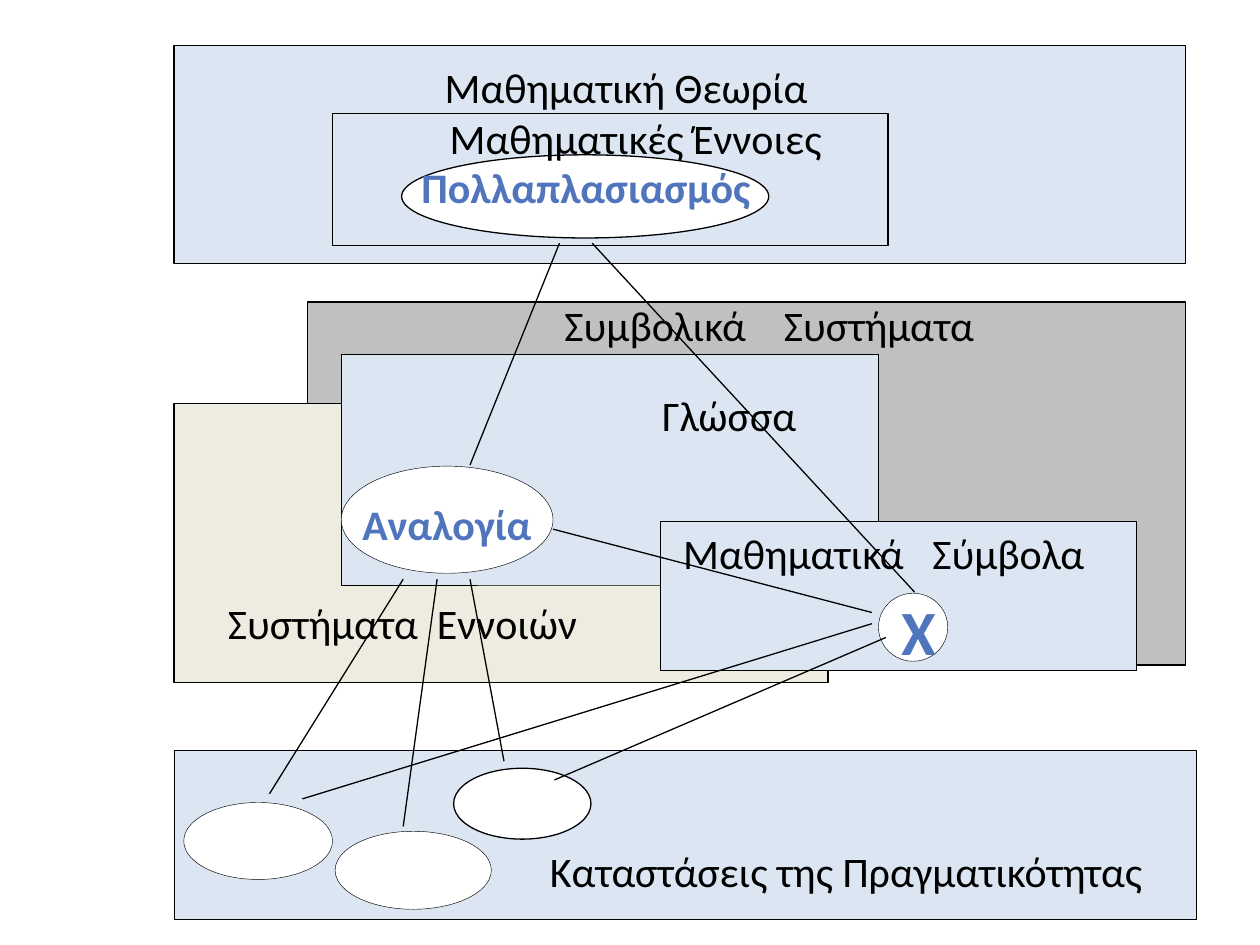
import pptx
import pptx.util
import pptx.dml.color
import pptx.enum.shapes
import pptx.enum.text
import lxml.etree

Pt = pptx.util.Pt
RGB = pptx.dml.color.RGBColor
Kind = pptx.enum.shapes.MSO_SHAPE
Link = pptx.enum.shapes.MSO_CONNECTOR
Align = pptx.enum.text.PP_ALIGN

BLACK = RGB(0, 0, 0)
WHITE = RGB(0xFF, 0xFF, 0xFF)
PALE = RGB(0xDC, 0xE6, 0xF2)
GREY = RGB(0xC0, 0xC0, 0xC0)
SAND = RGB(0xEE, 0xEC, 0xE1)
BLUE = RGB(0x50, 0x75, 0xBC)
THIN, FINE = 0.75, 0.25
SPACE = 0.226


class Board:
    def __init__(self, deck):
        self.slide = deck.slides.add_slide(deck.slide_layouts[6])
        self.style = {"name": "Calibri", "size": Pt(24), "bold": False}

    def shape(self, kind, box, fill, width):
        item = self.slide.shapes.add_shape(kind, *map(Pt, box))
        item.shadow.inherit = False
        item.fill.solid()
        item.fill.fore_color.rgb = fill
        item.line.color.rgb = BLACK
        item.line.width = Pt(width)

    def rect(self, box, fill=PALE, width=FINE):
        self.shape(Kind.RECTANGLE, box, fill, width)

    def oval(self, box, width=FINE):
        self.shape(Kind.OVAL, box, WHITE, width)

    def line(self, start, end):
        item = self.slide.shapes.add_connector(
            Link.STRAIGHT, *map(Pt, start + end))
        item.line.color.rgb = BLACK
        item.line.width = Pt(THIN)
        tag = pptx.oxml.ns.qn("a:effectLst")
        lxml.etree.SubElement(item._element.spPr, tag)

    def text(self, box, words, color=BLACK, align=Align.CENTER, gap=1, **extra):
        item = self.slide.shapes.add_textbox(*map(Pt, box))
        frame = item.text_frame
        frame.word_wrap = True
        para = frame.paragraphs[0]
        para.alignment = align
        style = {**self.style, **extra}
        first, *rest = words if gap > 1 else [words]
        parts = [first] + [part for word in rest for part in (" ", word)]
        for part in parts:
            run = para.add_run()
            run.text = part
            for key, value in style.items():
                setattr(run.font, key, value)
            run.font.color.rgb = color
            if part == " ":
                wide = (gap - 1) * SPACE * style["size"].pt
                run._r.get_or_add_rPr().set("spc", str(round(wide * 100)))


def main():
    deck = pptx.Presentation()
    deck.slide_width, deck.slide_height = Pt(720), Pt(540)
    board = Board(deck)

    board.rect((99.4, 26, 578, 124.6), width=THIN)
    board.rect((190, 65, 317.5, 75.5), width=THIN)
    board.oval((229.5, 88.5, 209.8, 47.5), THIN)
    board.rect((175.7, 172.6, 501.8, 207.4), GREY, THIN)
    board.rect((99.4, 230.4, 373.7, 159.8), SAND, THIN)
    board.rect((195, 202.3, 307, 132))
    board.rect((377.3, 298, 272, 85))
    board.oval((502, 339, 39.6, 38.9))
    board.oval((195, 266.4, 121, 61.2))
    board.rect((99.4, 428.6, 584, 96.5))
    board.oval((105, 458.6, 85, 44))
    board.oval((191.5, 475, 89.3, 44.6))

    for start, end in [
        ((230.4, 331), (154, 453.6)),
        ((268.6, 331), (288, 435)),
        ((316, 302.4), (498.2, 350)),
        ((319.7, 139), (268.6, 265.7)),
        ((338.4, 139), (522.7, 338.4)),
    ]:
        board.line(start, end)
    board.oval((259.2, 439, 78.5, 40.5), THIN)
    for start, end in [
        ((249.8, 331), (230.4, 472.3)),
        ((506.2, 364.3), (316.8, 445.7)),
        ((498.2, 356.4), (172.8, 456.5)),
    ]:
        board.line(start, end)

    board.text((247, 31.7, 235.4, 65.5), "Μαθηματική Θεωρία", align=Align.LEFT)
    board.text((201.6, 60.5, 323.3, 36), "Μαθηματικές Έννοιες")
    board.text((230.4, 88.6, 208.8, 36), "Πολλαπλασιασμός", BLUE, bold=True)
    board.text((229.7, 167.8, 419.8, 36), ("Συμβολικά", "Συστήματα"), gap=4)
    board.text((85.2, 337.7, 289.4, 36), ("Συστήματα", "Εννοιών"), gap=2)
    board.text((363.2, 298, 283.7, 36), ("Μαθηματικά", "Σύμβολα"), gap=3)
    board.text((345.8, 218.9, 141.8, 36), "Γλώσσα")
    board.text((508.3, 334.8, 28, 51), "Χ", BLUE, bold=True, size=Pt(36))
    board.text((181.6, 281.5, 147.6, 36), "Αναλογία", BLUE, bold=True)
    board.text((280.8, 479.5, 405.4, 80), "Καταστάσεις της Πραγματικότητας")

    deck.save("out.pptx")


if __name__ == "__main__":
    main()
